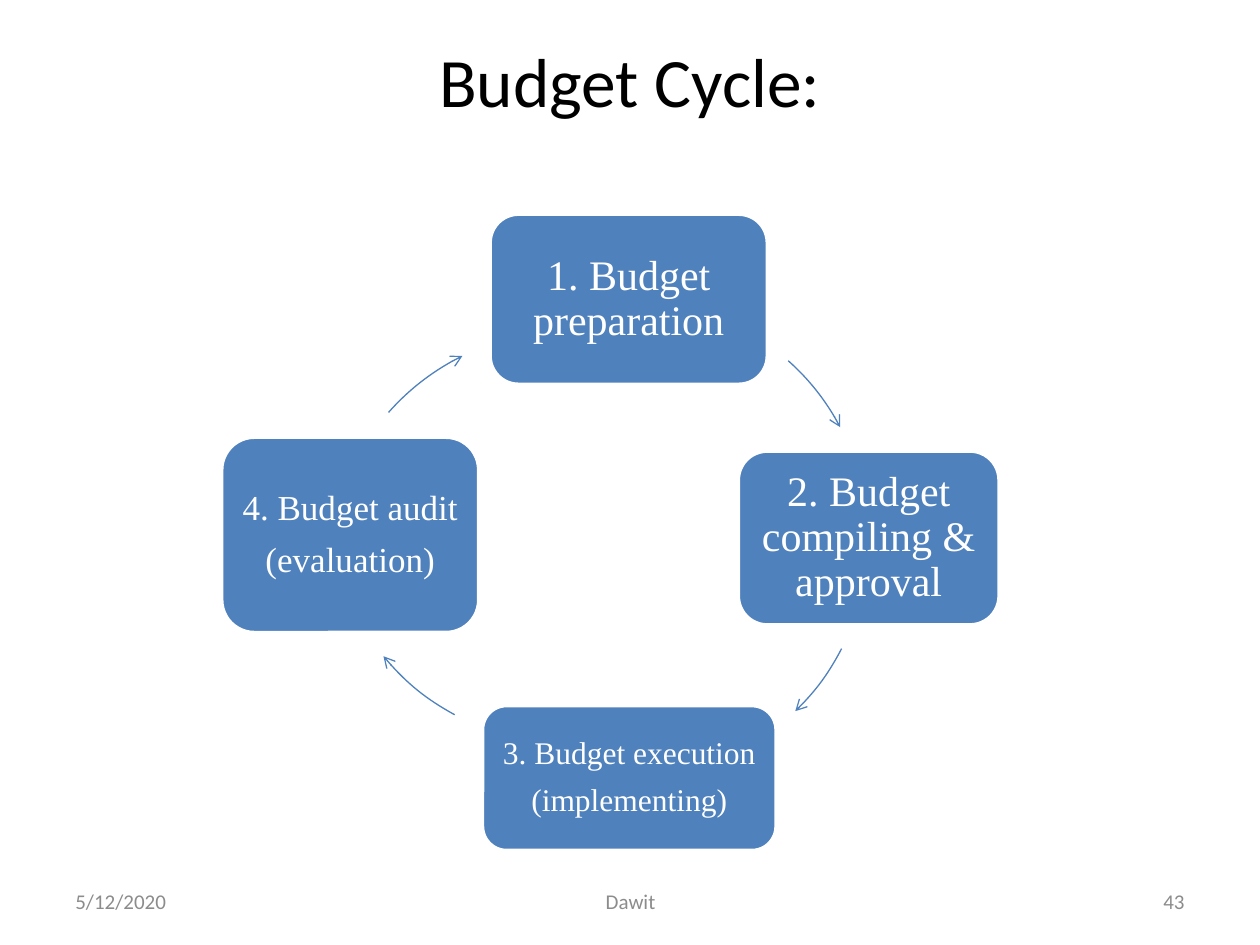
from dataclasses import dataclass

from pptx import Presentation
from pptx import util as u
from pptx.dml.color import RGBColor
from pptx.enum import shapes, text
from pptx.oxml import parse_xml
from pptx.oxml.ns import nsdecls

COLORS = {"blue": "4F81BD", "white": "FFFFFF", "black": "000000", "gray": "8C8C8C"}
LEFT, MID, RIGHT = text.PP_ALIGN.LEFT, text.PP_ALIGN.CENTER, text.PP_ALIGN.RIGHT
SIDE = 3.8  # diameter of the circles that carry the arrows


@dataclass
class Step:
    box: tuple[float, float, float, float]
    lines: list[str]
    size: float
    inset: float


@dataclass
class Arrow:
    left: float
    top: float
    start: float  # degrees, clockwise from the right
    end: float


STEPS = [
    Step((3.89, 1.7, 2.2, 1.35), ["1. Budget preparation"], 24, 0.1),
    Step((5.86, 3.58, 2.07, 1.38), ["2. Budget compiling & approval"], 24, 0.1),
    Step((3.83, 5.6, 2.33, 1.15), ["3. Budget execution", "(implementing)"], 18, 0.07),
    Step((1.76, 3.47, 2.04, 1.55), ["4. Budget audit", "(evaluation)"], 20, 0.08),
]
ARROWS = [
    Arrow(3.09, 2.38, 311.8, 332.1),
    Arrow(3.09, 2.38, 27.2, 45.9),
    Arrow(2.61, 2.1, 118.3, 140.5),
    Arrow(2.61, 2.63, 221.4, 243.8),
]
FOOTER = [
    ((0.5, 6.95, 2.33, 0.4), "5/12/2020", LEFT),
    ((3.42, 6.95, 3.17, 0.4), "Dawit", MID),
    ((7.17, 6.95, 2.33, 0.4), "43", RIGHT),
]


def color(name: str) -> RGBColor:
    return RGBColor.from_string(COLORS[name])


def write(shape, lines: list[str], *, size: float, ink: str, font: str = "Calibri",
          align=MID, anchor=text.MSO_ANCHOR.MIDDLE, inset: tuple[float, float] = (0.1, 0.05),
          spacing: float = 1, after: float = 0) -> None:
    """Fill a shape with paragraphs that share one format."""
    frame = shape.text_frame
    frame.word_wrap = True
    frame.vertical_anchor = anchor
    frame.margin_left = frame.margin_right = u.Inches(inset[0])
    frame.margin_top = frame.margin_bottom = u.Inches(inset[1])
    for i, line in enumerate(lines):
        para = frame.add_paragraph() if i else frame.paragraphs[0]
        para.alignment = align
        para.line_spacing = spacing
        para.space_after = u.Pt(after)
        run = para.add_run()
        run.text = line
        run.font.name = font
        run.font.size = u.Pt(size)
        run.font.color.rgb = color(ink)


def add_text(slide, box: tuple, line: str, **form) -> None:
    write(slide.shapes.add_textbox(*map(u.Inches, box)), [line], **form)


def add_step(slide, step: Step) -> None:
    shape = slide.shapes.add_shape(
        shapes.MSO_SHAPE.ROUNDED_RECTANGLE, *map(u.Inches, step.box))
    shape.shadow.inherit = False
    shape.fill.solid()
    shape.fill.fore_color.rgb = color("blue")
    shape.line.color.rgb = color("white")
    shape.line.width = u.Pt(2)
    write(shape, step.lines, size=step.size, ink="white", font="Times New Roman",
          inset=(step.inset, step.inset), spacing=0.9, after=0.4 * step.size)


def add_arrow(slide, arrow: Arrow) -> None:
    arc = slide.shapes.add_shape(
        shapes.MSO_SHAPE.ARC, *map(u.Inches, (arrow.left, arrow.top, SIDE, SIDE)))
    # An angle is stored in 60000ths of a degree, an adjustment in 100000ths
    arc.adjustments[0] = arrow.start * 0.6
    arc.adjustments[1] = arrow.end * 0.6
    arc.shadow.inherit = False
    arc.fill.background()
    arc.line.color.rgb = color("blue")
    arc.line.width = u.Pt(0.75)
    arc.line._get_or_add_ln().append(
        parse_xml(f'<a:tailEnd {nsdecls("a")} type="arrow"/>'))


def main() -> None:
    deck = Presentation()
    deck.slide_width, deck.slide_height = u.Inches(10), u.Inches(7.5)
    slide = deck.slides.add_slide(deck.slide_layouts[6])

    # Title
    add_text(slide, (0.5, 0.3, 9, 1.25), "Budget Cycle:", size=39.6, ink="black",
             anchor=text.MSO_ANCHOR.TOP, inset=(0.1, 0))

    # Cycle: each step is followed by its arrow
    for step, arrow in zip(STEPS, ARROWS):
        add_step(slide, step)
        add_arrow(slide, arrow)

    # Footer
    for box, line, align in FOOTER:
        add_text(slide, box, line, size=12, ink="gray", align=align)

    deck.save("out.pptx")


if __name__ == "__main__":
    main()
